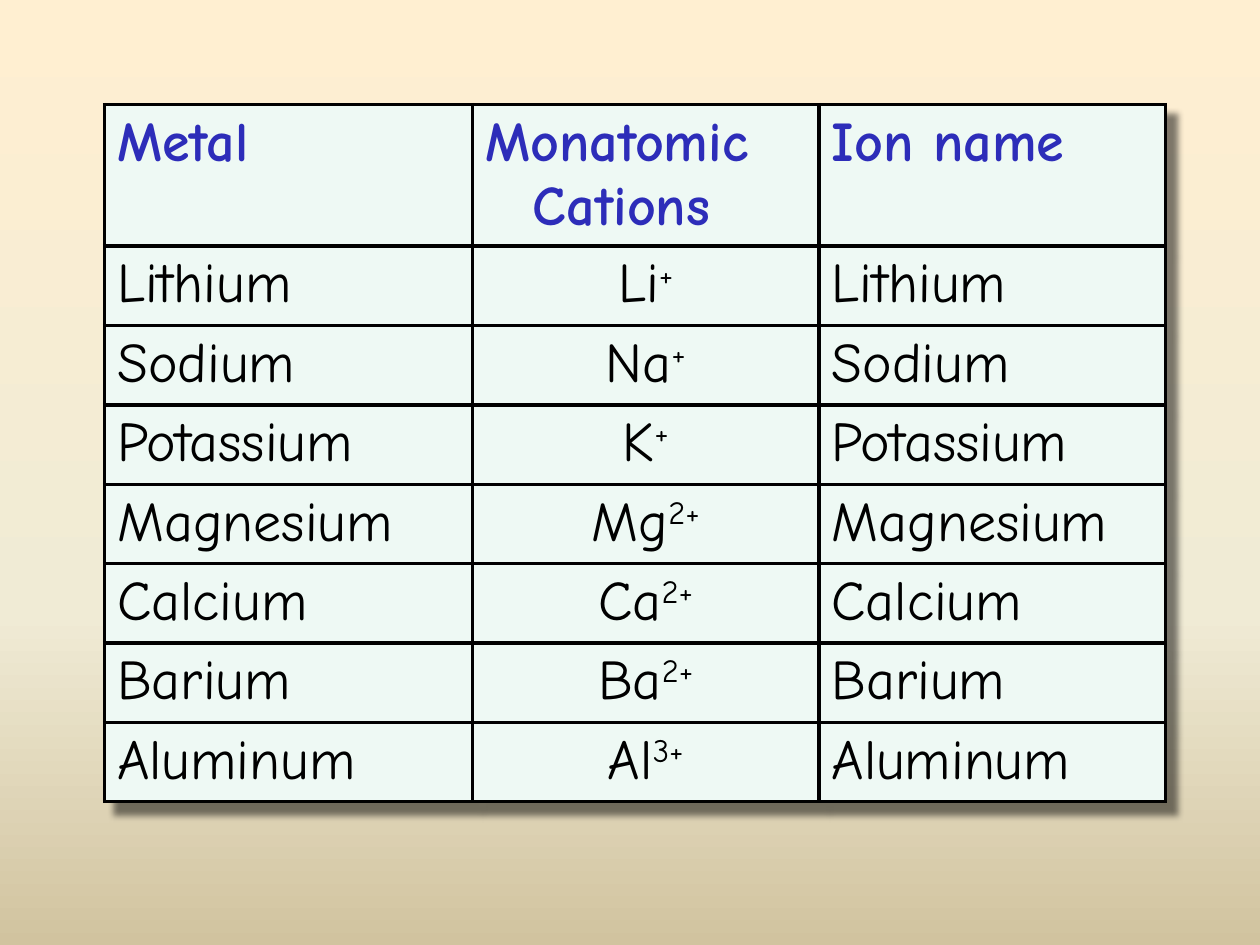
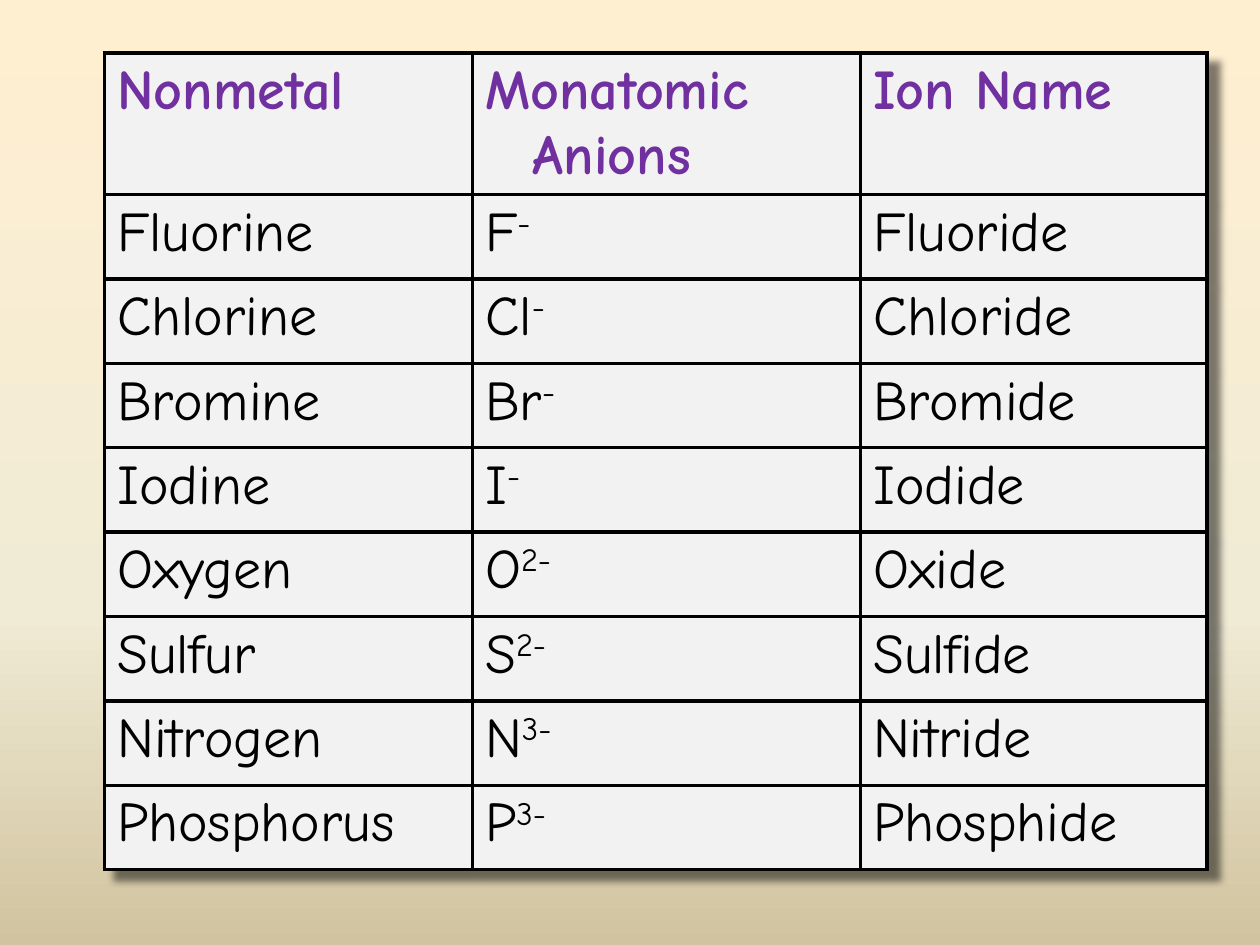
import copy
from dataclasses import dataclass

import pptx
import pptx.dml.color
import pptx.enum.text
import pptx.oxml
import pptx.oxml.ns
import pptx.util

Inches = pptx.util.Inches
Pt = pptx.util.Pt
RGBColor = pptx.dml.color.RGBColor
ALIGN = pptx.enum.text.PP_ALIGN
qn = pptx.oxml.ns.qn


@dataclass(frozen=True)
class Theme:
    font: str = "Comic Neue"
    size: int = 32
    ink: str = "000000"
    border: float = 2.25
    hanging: float = 0.38
    header_height: float = 1.12
    superscript: int = 30000
    backdrop: tuple = ((0, "FFEFD1"), (0.65, "F0EBD5"), (1, "D1C39F"))


THEME = Theme()

ION_TABLES = [
    {
        "header": ("Metal", "Monatomic Cations", "Ion name"),
        "ions": [
            ("Lithium", ("Li", "+"), "Lithium"),
            ("Sodium", ("Na", "+"), "Sodium"),
            ("Potassium", ("K", "+"), "Potassium"),
            ("Magnesium", ("Mg", "2+"), "Magnesium"),
            ("Calcium", ("Ca", "2+"), "Calcium"),
            ("Barium", ("Ba", "2+"), "Barium"),
            ("Aluminum", ("Al", "3+"), "Aluminum"),
        ],
        "corner": (0.83, 0.83),
        "widths": (2.92, 2.75, 2.75),
        "row_height": 0.63,
        "header_color": "2D2DB9",
        "cell_color": "EEF9F4",
        "symbol_align": ALIGN.CENTER,
    },
    {
        "header": ("Nonmetal", "Monatomic Anions", "Ion Name"),
        "ions": [
            ("Fluorine", ("F", "-"), "Fluoride"),
            ("Chlorine", ("Cl", "-"), "Chloride"),
            ("Bromine", ("Br", "-"), "Bromide"),
            ("Iodine", ("I", "-"), "Iodide"),
            ("Oxygen", ("O", "2-"), "Oxide"),
            ("Sulfur", ("S", "2-"), "Sulfide"),
            ("Nitrogen", ("N", "3-"), "Nitride"),
            ("Phosphorus", ("P", "3-"), "Phosphide"),
        ],
        "corner": (0.83, 0.42),
        "widths": (2.92, 3.08, 2.75),
        "row_height": 0.67,
        "header_color": "7030A0",
        "cell_color": "F2F2F2",
        "symbol_align": ALIGN.LEFT,
    },
]


def paint_backdrop(master):
    fill = master.background.fill
    fill.gradient()
    fill.gradient_angle = 270
    stops = next(master.element.iter(qn("a:gsLst")))
    stops.append(copy.deepcopy(stops[-1]))
    for stop, (position, color) in zip(fill.gradient_stops, THEME.backdrop):
        stop.position = position
        stop.color.rgb = RGBColor.from_string(color)


def write_cell(cell, content, color, bold, align, cell_color):
    cell.fill.solid()
    cell.fill.fore_color.rgb = RGBColor.from_string(cell_color)
    paragraph = cell.text_frame.paragraphs[0]
    paragraph.alignment = align
    pieces = (content,) if isinstance(content, str) else content
    look = {"name": THEME.font, "size": Pt(THEME.size), "bold": bold}
    for piece in pieces:
        run = paragraph.add_run()
        run.text = piece
        for attribute, value in look.items():
            setattr(run.font, attribute, value)
        run.font.color.rgb = RGBColor.from_string(color)


def border(side):
    return pptx.oxml.parse_xml(
        f'<a:{side} {pptx.oxml.ns.nsdecls("a")} w="{Pt(THEME.border)}">'
        f'<a:solidFill><a:srgbClr val="{THEME.ink}"/></a:solidFill></a:{side}>'
    )


def table_shadow():
    return pptx.oxml.parse_xml(
        f'<a:effectLst {pptx.oxml.ns.nsdecls("a")}>'
        f'<a:outerShdw blurRad="{Inches(0.05)}" dist="{Inches(0.12)}" dir="2700000">'
        f'<a:srgbClr val="{THEME.ink}"><a:alpha val="50000"/></a:srgbClr>'
        "</a:outerShdw></a:effectLst>"
    )


def finish_table(element):
    for paragraph_format in element.xpath(".//a:pPr"):
        paragraph_format.set("marL", str(Inches(THEME.hanging)))
        paragraph_format.set("indent", str(-Inches(THEME.hanging)))
    for charge in element.xpath(".//a:r[2]/a:rPr"):
        charge.set("baseline", str(THEME.superscript))
    for cell_format in element.xpath(".//a:tcPr"):
        for place, side in enumerate(("lnL", "lnR", "lnT", "lnB")):
            cell_format.insert(place, border(side))
    element.xpath(".//a:tblPr")[0].insert(0, table_shadow())


def add_ion_table(slide, ion_table):
    rows = [ion_table["header"], *ion_table["ions"]]
    heights = [THEME.header_height] + [ion_table["row_height"]] * len(ion_table["ions"])
    widths = ion_table["widths"]
    bounds = (*ion_table["corner"], sum(widths), sum(heights))
    frame = slide.shapes.add_table(len(rows), len(widths), *map(Inches, bounds))
    table = frame.table
    table.first_row = table.horz_banding = False
    for column, width in zip(table.columns, widths):
        column.width = Inches(width)
    for row, height in zip(table.rows, heights):
        row.height = Inches(height)
    for r, contents in enumerate(rows):
        is_header = r == 0
        color = ion_table["header_color"] if is_header else THEME.ink
        for c, content in enumerate(contents):
            is_symbol = not isinstance(content, str)
            align = ion_table["symbol_align"] if is_symbol else ALIGN.LEFT
            write_cell(table.cell(r, c), content, color, is_header, align,
                       ion_table["cell_color"])
    finish_table(frame.element)


def main():
    deck = pptx.Presentation()
    deck.slide_width, deck.slide_height = Inches(10), Inches(7.5)
    paint_backdrop(deck.slide_master)
    blank = deck.slide_layouts.get_by_name("Blank")
    for ion_table in ION_TABLES:
        add_ion_table(deck.slides.add_slide(blank), ion_table)
    deck.save("out.pptx")


if __name__ == "__main__":
    main()
